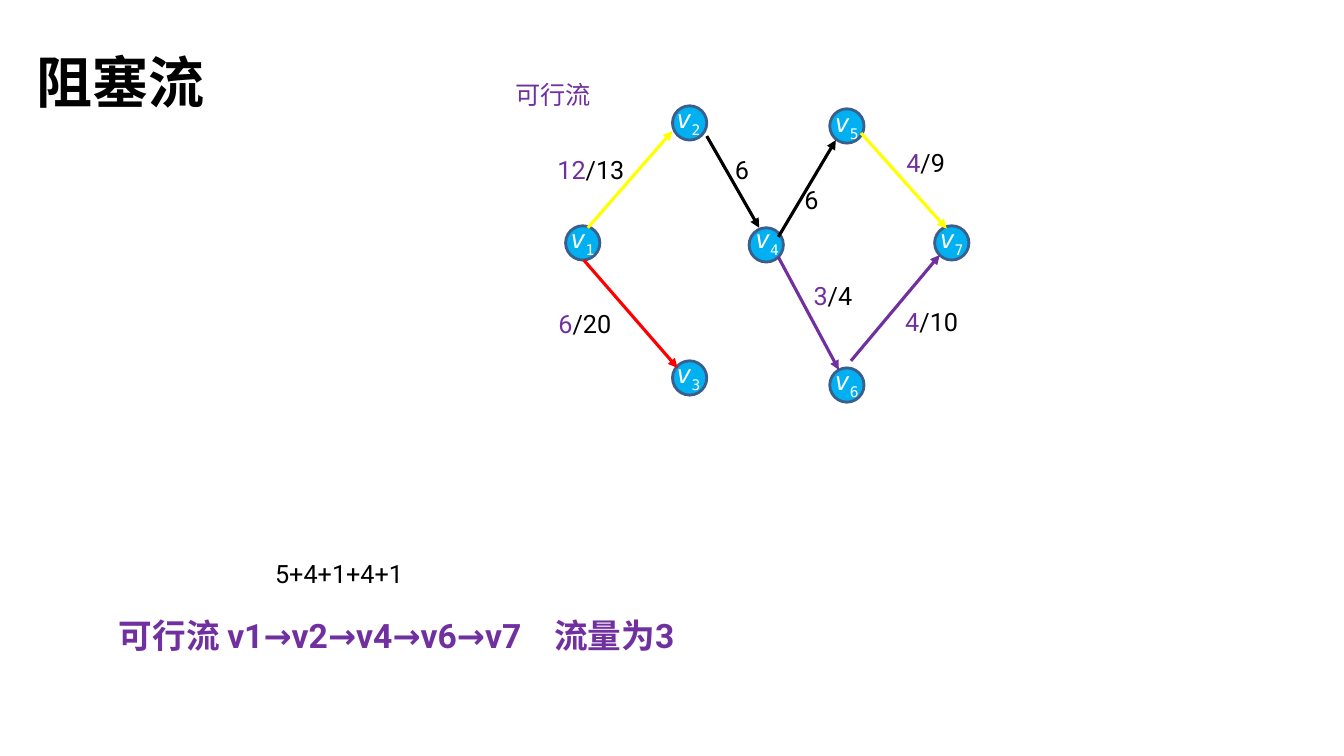
import pptx
import pptx.util
import pptx.dml.color
import pptx.enum.shapes
import pptx.enum.text
import pptx.oxml
import pptx.oxml.ns
import lxml.etree

RGBColor = pptx.dml.color.RGBColor
BLACK = RGBColor(0x00, 0x00, 0x00)
WHITE = RGBColor(0xFF, 0xFF, 0xFF)
PURPLE = RGBColor(0x70, 0x30, 0xA0)
YELLOW = RGBColor(0xFF, 0xFF, 0x00)
RED = RGBColor(0xFF, 0x00, 0x00)
NODE_FILL = RGBColor(0x00, 0xB0, 0xF0)
NODE_LINE = RGBColor(0x3A, 0x5F, 0x8C)

EMU_PER_PX = 9144
NODE_SIZE = 34
TEXT_HEIGHT = 40

NODES = [
    (1, (61, 154), (56, 147)),
    (2, (167, 35), (161, 28)),
    (3, (167, 288), (161, 281)),
    (5, (323, 38), (318, 32)),
    (4, (243, 156), (239, 147)),
    (6, (323, 295), (318, 288)),
    (7, (427, 154), (422, 147)),
]
EDGES = [
    ((83, 156), (167, 60), YELLOW),
    ((79, 188), (172, 295), RED),
    ((201, 65), (253, 156), BLACK),
    ((272, 185), (332, 297), PURPLE),
    ((344, 288), (432, 183), PURPLE),
    ((272, 165), (329, 69), BLACK),
    ((354, 62), (439, 157), YELLOW),
]
CAPACITIES = [
    (43, 78, 93, "12", "/13"),
    (44, 231, 95, "6", "/20"),
    (219, 78, 79, "", "6"),
    (288, 108, 79, "", "6"),
    (297, 203, 79, "3", "/4"),
    (389, 71, 79, "4", "/9"),
    (388, 229, 79, "4", "/10"),
]


def px(length):
    """Turn px, 100 to the inch, into EMU."""
    return pptx.util.Emu(length * EMU_PER_PX)


def add_run(paragraph, text, color, size=18, font="Roboto", bold=False, italic=False):
    """Append one formatted run and return it."""
    run = paragraph.add_run()
    run.text = text
    run.font.name = font
    run.font.size = pptx.util.Pt(size)
    run.font.bold = bold
    run.font.italic = italic
    run.font.color.rgb = color
    return run


def add_text_box(slide, left, top, width, height=TEXT_HEIGHT):
    """Add a wrapping text box and return its first paragraph."""
    frame = slide.shapes.add_textbox(px(left), px(top), px(width), px(height)).text_frame
    frame.word_wrap = True
    frame.auto_size = pptx.enum.text.MSO_AUTO_SIZE.SHAPE_TO_FIT_TEXT
    return frame.paragraphs[0]


def add_title(slide, left, top, width, height):
    """Place and format the title placeholder."""
    title = slide.shapes.title
    title.left, title.top, title.width, title.height = map(px, (left, top, width, height))
    frame = title.text_frame
    frame.auto_size = pptx.enum.text.MSO_AUTO_SIZE.NONE
    frame.vertical_anchor = pptx.enum.text.MSO_ANCHOR.MIDDLE
    paragraph = frame.paragraphs[0]
    paragraph.alignment = pptx.enum.text.PP_ALIGN.LEFT
    add_run(paragraph, "阻塞流", BLACK, 40, "Arial", bold=True)


def add_node(slide, left, top):
    """Draw the circle of one vertex."""
    node = slide.shapes.add_shape(
        pptx.enum.shapes.MSO_SHAPE.OVAL, px(left), px(top), px(NODE_SIZE), px(NODE_SIZE))
    node.shadow.inherit = False
    node.fill.solid()
    node.fill.fore_color.rgb = NODE_FILL
    node.line.color.rgb = NODE_LINE
    node.line.width = pptx.util.Pt(2)


def add_node_label(slide, left, top, number):
    """Write the vertex name with its subscript."""
    paragraph = add_text_box(slide, left, top, 52)
    add_run(paragraph, "v", WHITE, font="DejaVu Sans Mono", italic=True)
    subscript = add_run(paragraph, str(number), WHITE, font="DejaVu Sans Mono")
    subscript.font._element.set("baseline", "-25000")


def add_edge(slide, start_x, start_y, end_x, end_y, color):
    """Draw an arrow between two points."""
    edge = slide.shapes.add_connector(
        pptx.enum.shapes.MSO_CONNECTOR.STRAIGHT,
        px(start_x), px(start_y), px(end_x), px(end_y))
    edge.line.color.rgb = color
    edge.line.width = pptx.util.Pt(2.25)
    qn = pptx.oxml.ns.qn
    lxml.etree.SubElement(edge.line._get_or_add_ln(), qn("a:tailEnd"), type="triangle")
    lxml.etree.SubElement(edge._element.spPr, qn("a:effectLst"))


def add_flow_graph(slide, left, top):
    """Draw the flow network relative to its corner."""
    for number, (x, y), label in NODES:
        add_node(slide, left + x, top + y)
    for number, node, (x, y) in NODES:
        add_node_label(slide, left + x, top + y, number)
    for (start_x, start_y), (end_x, end_y), color in EDGES:
        add_edge(slide, left + start_x, top + start_y, left + end_x, top + end_y, color)
    for x, y, width, flow, capacity in CAPACITIES:
        paragraph = add_text_box(slide, left + x, top + y, width)
        if flow:
            add_run(paragraph, flow, PURPLE)
        add_run(paragraph, capacity, BLACK)
    add_run(add_text_box(slide, left + 1, top + 4, 155), "可行流", PURPLE)


def add_flow_summary(slide, left, top, width):
    """Write the sum and the augmenting path below the graph."""
    add_run(add_text_box(slide, left + 155, top, 375), "5+4+1+4+1", BLACK)
    paragraph = add_text_box(slide, left, top + 56, width, 50)
    qn = pptx.oxml.ns.qn
    tab_list = lxml.etree.SubElement(paragraph._p.get_or_add_pPr(), qn("a:tabLst"))
    lxml.etree.SubElement(tab_list, qn("a:tab"), pos=str(px(432)), algn="l")
    add_run(paragraph, "可行流 v1→v2→v4→v6→v7\t流量为3", PURPLE, 24, bold=True)


def main():
    """Build the slide and save it."""
    presentation = pptx.Presentation()
    presentation.slide_width = px(1333)
    presentation.slide_height = px(750)
    slide = presentation.slides.add_slide(presentation.slide_layouts[5])
    add_title(slide, 26, 20, 652, 121)
    add_flow_graph(slide, 500, 70)
    add_flow_summary(slide, 108, 549, 708)
    presentation.save("out.pptx")


if __name__ == "__main__":
    main()
